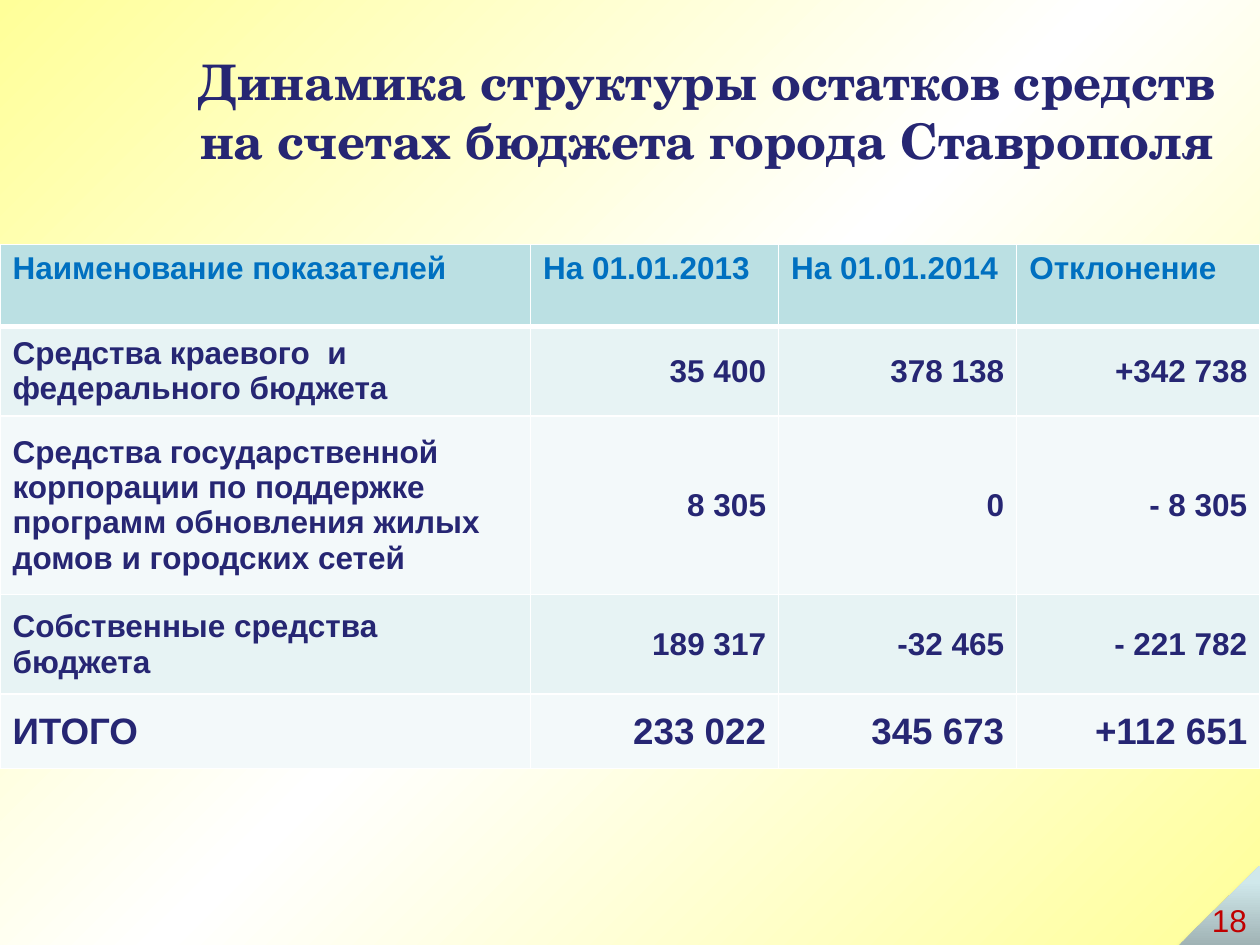
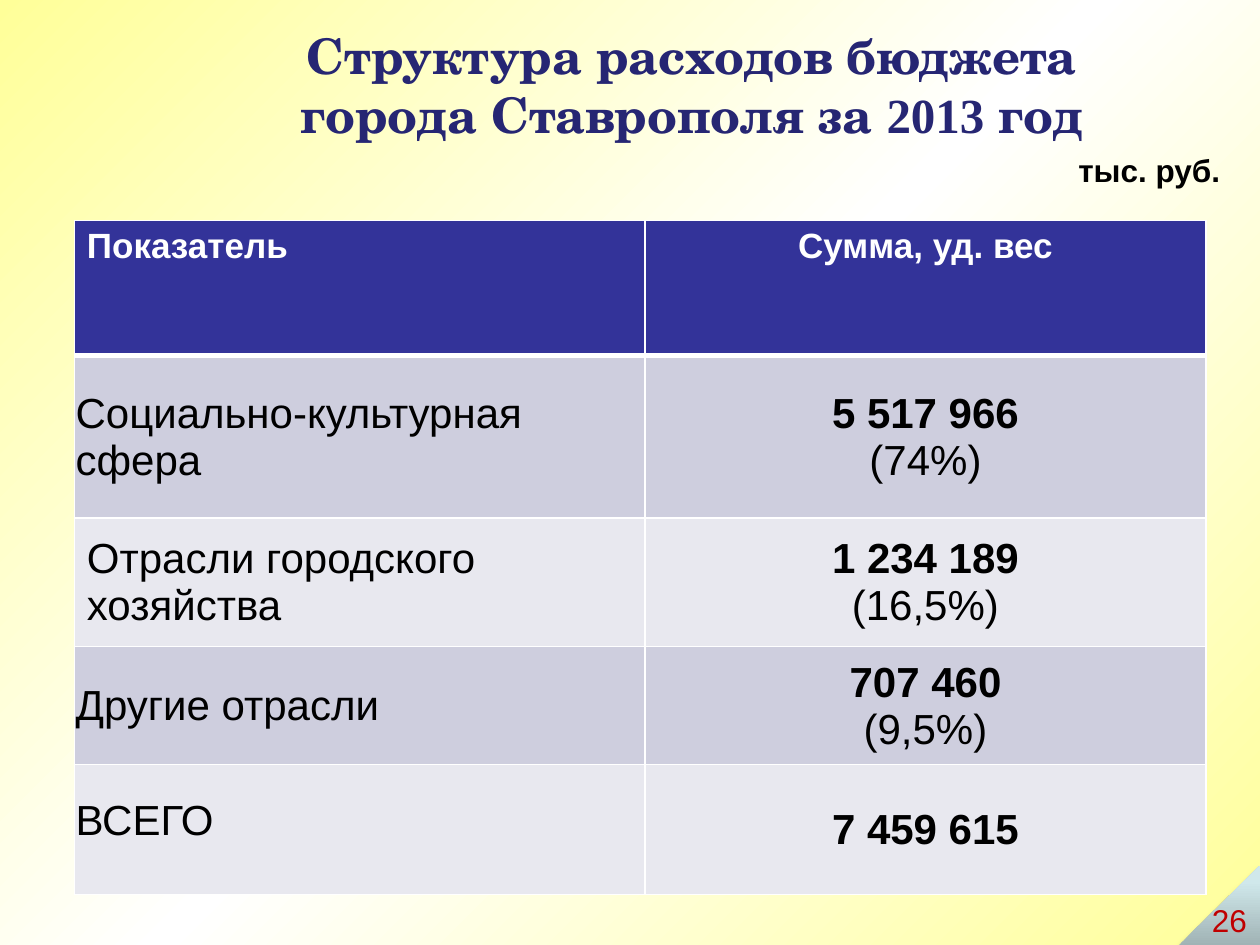
"""Builds two budget slides of the city of Stavropol: account balances and spending structure."""
from dataclasses import dataclass
from typing import Optional

from lxml import etree
from pptx import Presentation
from pptx import util as u
from pptx.dml.color import RGBColor
from pptx.enum import shapes, text
from pptx.oxml.ns import qn

EMU_PER_PX = 9144
COLORS = {
    "navy": "262673", "black": "000000", "white": "FFFFFF", "red": "C00000",
    "blue": "0070C0", "indigo": "333399", "yellow": "FFFF99",
    "teal": "BBE0E3", "teal_band": "E7F3F4", "teal_pale": "F3F9FA",
    "lilac_band": "CECEDE", "lilac_pale": "E8E8EF",
    "fold_dark": "A0B3B5", "fold_mid": "D0E8EB", "fold_light": "D1EAEC",
}
BODY_FONT, TITLE_FONT, TITLE_DIGIT_FONT = "Arial", "TeX Gyre Schola", "Times New Roman"
LEFT, CENTER, RIGHT = text.PP_ALIGN.LEFT, text.PP_ALIGN.CENTER, text.PP_ALIGN.RIGHT
TOP, MIDDLE, BOTTOM = text.MSO_ANCHOR.TOP, text.MSO_ANCHOR.MIDDLE, text.MSO_ANCHOR.BOTTOM


@dataclass(frozen=True)
class Box:
    """A rectangle in px."""
    left: int
    top: int
    width: int
    height: int

    def emu(self) -> tuple:
        """Return the four lengths in EMU."""
        return tuple(px(v) for v in (self.left, self.top, self.width, self.height))


@dataclass(frozen=True)
class Cell:
    """A table cell whose first line may be bold; margins are left, top, right, bottom."""
    words: str
    size: int
    color: str
    bold: bool = True
    align: text.PP_ALIGN = LEFT
    anchor: text.MSO_ANCHOR = MIDDLE
    margins: Optional[tuple] = None


@dataclass(frozen=True)
class Grid:
    """A table with a header fill and two alternating row fills."""
    left: int
    top: int
    columns: tuple
    heights: tuple
    header_fill: str
    band_fills: tuple
    rows: list


@dataclass(frozen=True)
class Page:
    """One slide: its title lines, each a tuple of runs, its table and its number."""
    title: tuple
    title_box: Box
    grid: Grid
    number: int
    unit: str = ""


def px(length: float) -> int:
    """Convert px to EMU."""
    return round(length * EMU_PER_PX)


def rgb(color: str) -> RGBColor:
    """Return a named colour."""
    return RGBColor.from_string(COLORS[color])


def add_element(parent, tag: str, **attributes):
    """Append an XML element to a parent."""
    element = etree.SubElement(parent, qn(tag))
    for key, value in attributes.items():
        element.set(key, str(value))
    return element


def style(font, size: int, color: str, bold: bool = False, face: str = BODY_FONT) -> None:
    """Format a font."""
    font.name, font.size, font.bold = face, u.Pt(size), bold
    font.color.rgb = rgb(color)


def set_gradient(fill, owner, stops: tuple, angle: int) -> None:
    """Give a fill linear gradient stops; owner is the element that holds it."""
    fill.gradient()
    gradient = next(owner.iter(qn("a:gradFill")))
    for child in list(gradient):
        gradient.remove(child)
    stop_list = add_element(gradient, "a:gsLst")
    for percent, color in stops:
        stop = add_element(stop_list, "a:gs", pos=percent * 1000)
        add_element(stop, "a:srgbClr", val=COLORS[color])
    add_element(gradient, "a:lin", ang=angle * 60000, scaled=0)


def add_title(slide, page: Page) -> None:
    """Fill and place the title placeholder."""
    title = slide.shapes.title
    title.left, title.top, title.width, title.height = page.title_box.emu()
    frame = title.text_frame
    frame.word_wrap, frame.auto_size = True, text.MSO_AUTO_SIZE.NONE
    frame.vertical_anchor = MIDDLE
    for index, line in enumerate(page.title):
        paragraph = frame.add_paragraph() if index else frame.paragraphs[0]
        paragraph.alignment = CENTER
        for words in line:
            run = paragraph.add_run()
            run.text = words
            face = TITLE_DIGIT_FONT if words.isdigit() else TITLE_FONT
            style(run.font, 28, "navy", True, face)


def add_label(slide, box: Box, words: str, color: str, bold: bool = False) -> None:
    """Add a one-line label."""
    frame = slide.shapes.add_textbox(*box.emu()).text_frame
    frame.word_wrap = False
    frame.text = words
    style(frame.paragraphs[0].runs[0].font, 18, color, bold)


def add_page_corner(slide, number: int) -> None:
    """Draw the folded corner with the slide number."""
    fold = slide.shapes.add_shape(shapes.MSO_SHAPE.RIGHT_TRIANGLE, *Box(936, 687, 64, 63).emu())
    fold.element.spPr.find(qn("a:xfrm")).set("flipH", "1")
    set_gradient(fold.fill, fold.element.spPr,
                 ((0, "fold_dark"), (80, "fold_mid"), (100, "fold_light")), 270)
    fold.line.fill.background()
    fold.shadow.inherit = False
    shadow = add_element(fold.element.spPr.find(qn("a:effectLst")), "a:outerShdw",
                         blurRad=u.Pt(3.1), dist=u.Pt(1.8), dir=90 * 60000, rotWithShape=0)
    shade = add_element(shadow, "a:srgbClr", val=COLORS["black"])
    add_element(shade, "a:alpha", val=35000)
    add_label(slide, Box(952, 710, 48, 40), str(number), "red")


def set_borders(target, row: int) -> None:
    """Draw white cell borders, thick under the header row."""
    properties = target._tc.get_or_add_tcPr()
    widths = {"a:lnL": 1, "a:lnR": 1, "a:lnT": 3 if row == 1 else 1, "a:lnB": 3 if row == 0 else 1}
    for position, (side, width) in enumerate(widths.items()):
        line = add_element(properties, side, w=u.Pt(width))
        add_element(add_element(line, "a:solidFill"), "a:srgbClr", val=COLORS["white"])
        properties.insert(position, line)


def fill_cell(target, cell: Cell, fill: str, row: int) -> None:
    """Write and format one table cell."""
    target.fill.solid()
    target.fill.fore_color.rgb = rgb(fill)
    set_borders(target, row)
    target.vertical_anchor = cell.anchor
    if cell.margins:
        (target.margin_left, target.margin_top,
         target.margin_right, target.margin_bottom) = map(px, cell.margins)
    target.text_frame.text = cell.words
    for index, paragraph in enumerate(target.text_frame.paragraphs):
        paragraph.alignment = cell.align
        for run in paragraph.runs:
            style(run.font, cell.size, cell.color, cell.bold and index == 0)


def add_grid(slide, grid: Grid) -> None:
    """Add a table."""
    box = Box(grid.left, grid.top, sum(grid.columns), sum(grid.heights))
    table = slide.shapes.add_table(len(grid.rows), len(grid.columns), *box.emu()).table
    for column, width in zip(table.columns, grid.columns):
        column.width = px(width)
    for index, cells in enumerate(grid.rows):
        table.rows[index].height = px(grid.heights[index])
        fill = grid.band_fills[(index - 1) % 2] if index else grid.header_fill
        for column, cell in enumerate(cells):
            fill_cell(table.cell(index, column), cell, fill, index)


def balance_row(name: str, *amounts: str, size: int = 18) -> list:
    """Return a row of account balances."""
    return [Cell(name, size, "navy")] + [Cell(a, size, "navy", align=RIGHT) for a in amounts]


def spending_row(name: str, amount: str, margins: Optional[tuple] = (1, 1, 1, 0),
                 anchor: text.MSO_ANCHOR = MIDDLE) -> list:
    """Return a row of spending."""
    return [Cell(name, 24, "black", False, anchor=anchor, margins=margins),
            Cell(amount, 24, "black", align=CENTER, margins=(1, 1, 1, 0))]


BALANCES = Grid(
    0, 194, (421, 197, 189, 193), (65, 71, 142, 79, 59), "teal", ("teal_band", "teal_pale"),
    [
        [Cell(words, 18, "blue", anchor=TOP) for words in
         ("Наименование показателей", "На 01.01.2013", "На 01.01.2014", "Отклонение")],
        balance_row("Средства краевого  и федерального бюджета", "35 400", "378 138", "+342 738"),
        balance_row("Средства государственной корпорации по поддержке программ "
                    "обновления жилых домов и городских сетей", "8 305", "0", "- 8 305"),
        balance_row("Собственные средства бюджета", "189 317", "-32 465", "- 221 782"),
        balance_row("ИТОГО", "233 022", "345 673", "+112 651", size=21),
    ])
SPENDING = Grid(
    59, 175, (453, 445), (107, 129, 102, 94, 103), "indigo", ("lilac_band", "lilac_pale"),
    [
        [Cell("Показатель", 20, "white", anchor=TOP),
         Cell("Сумма, уд. вес", 20, "white", align=CENTER, anchor=TOP)],
        spending_row("Социально-культурная сфера", "5 517 966\n(74%)"),
        spending_row("Отрасли городского хозяйства", "1 234 189\n(16,5%)", margins=None),
        spending_row("Другие отрасли", "707 460\n(9,5%)"),
        spending_row("ВСЕГО", "7 459 615", margins=(1, 1, 1, 40), anchor=BOTTOM),
    ])
PAGES = (
    Page((("Динамика структуры остатков средств на счетах бюджета города Ставрополя",),),
         Box(122, 30, 878, 115), BALANCES, 18),
    Page((("Структура расходов бюджета",), ("города Ставрополя за ", "2013", " год")),
         Box(122, 0, 854, 134), SPENDING, 26, "тыс. руб."),
)


def main() -> None:
    """Build and save the presentation."""
    deck = Presentation()
    deck.slide_width, deck.slide_height = px(1000), px(750)
    master = deck.slide_master
    set_gradient(master.background.fill, master.element,
                 ((0, "yellow"), (50, "white"), (100, "yellow")), 45)
    for page in PAGES:
        slide = deck.slides.add_slide(deck.slide_layouts.get_by_name("Title Only"))
        add_title(slide, page)
        if page.unit:
            add_label(slide, Box(846, 115, 134, 40), page.unit, "black", True)
        add_grid(slide, page.grid)
        add_page_corner(slide, page.number)
    deck.save("out.pptx")


if __name__ == "__main__":
    main()
